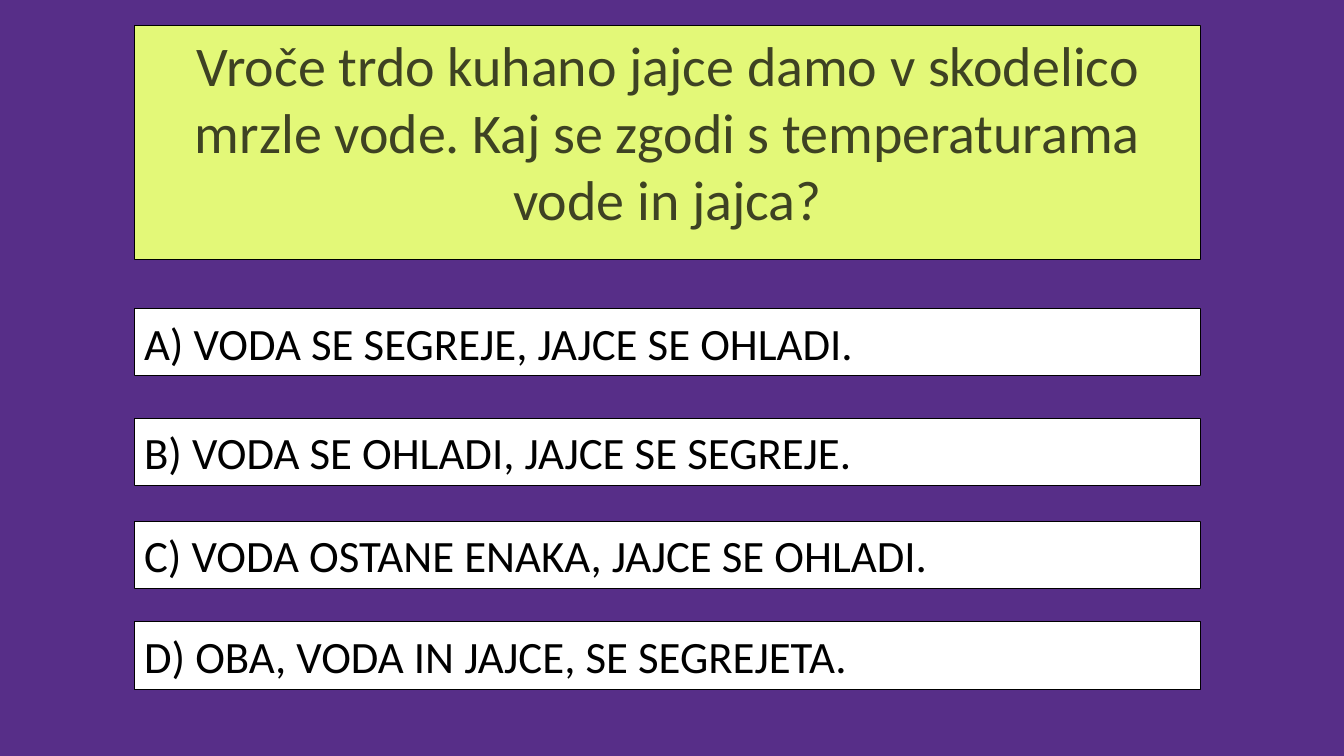
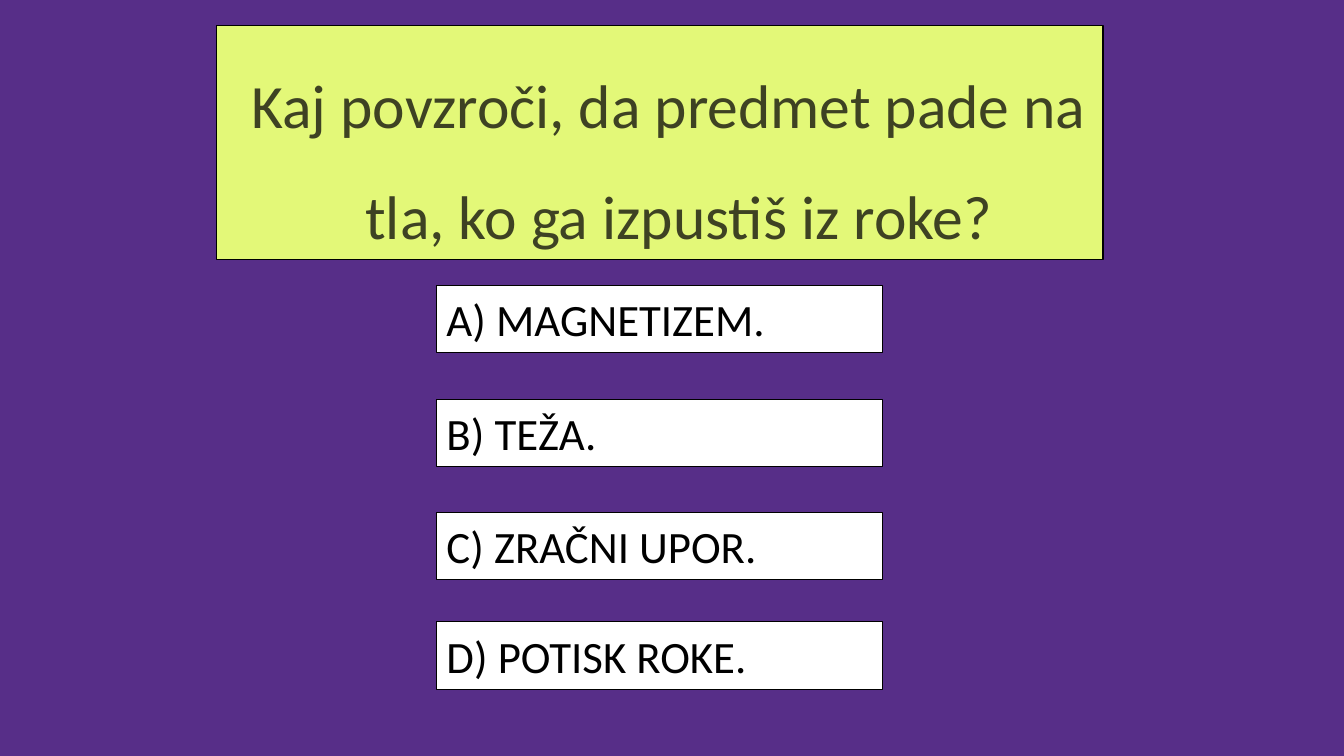
"""Builds two quiz slides, each with a question panel and four answer buttons."""
import pptx
import pptx.dml.color
import pptx.enum.shapes
import pptx.enum.text
import pptx.util

Inches = pptx.util.Inches
SHAPE = pptx.enum.shapes.MSO_SHAPE
ALIGN = pptx.enum.text.PP_ALIGN
ANCHOR = pptx.enum.text.MSO_ANCHOR

FONT = "Calibri"
PURPLE, LIME, OLIVE = "572E88", "E3F878", "3E4223"
BLACK, WHITE = "000000", "FFFFFF"
PANEL_TOP, PANEL_HEIGHT, BUTTON_HEIGHT = 0.25, 2.33, 0.67

QUIZ = [
    {
        "question": "Vroče trdo kuhano jajce damo v skodelico mrzle vode. "
                    "Kaj se zgodi s temperaturama vode in jajca?",
        "panel": (1.33, 10.58),
        "style": {"size": 40},
        "buttons": (1.33, 10.58),
        "answers": [
            (3.06, "A) VODA SE SEGREJE, JAJCE SE OHLADI."),
            (4.15, "B) VODA SE OHLADI, JAJCE SE SEGREJE."),
            (5.17, "C) VODA OSTANE ENAKA, JAJCE SE OHLADI."),
            (6.17, "D) OBA, VODA IN JAJCE, SE SEGREJETA."),
        ],
    },
    {
        "question": "Kaj povzroči, da predmet pade na tla, ko ga izpustiš iz roke?",
        "panel": (2.15, 8.79),
        "style": {"size": 44, "spacing": 1.5, "margin": 0.38, "indent": -0.2},
        "buttons": (4.33, 4.42),
        "answers": [
            (2.83, "A) MAGNETIZEM."),
            (3.96, "B) TEŽA."),
            (5.08, "C) ZRAČNI UPOR."),
            (6.17, "D) POTISK ROKE."),
        ],
    },
]


def paint(color_format, color):
    """Set a colour from a hex string."""
    color_format.rgb = pptx.dml.color.RGBColor.from_string(color)


def add_box(s, kind, box, fill, text, size, color):
    """Add an outlined, filled shape with one paragraph of text."""
    sp = s.shapes.add_shape(kind, *(Inches(v) for v in box))
    sp.shadow.inherit = False
    sp.fill.solid()
    paint(sp.fill.fore_color, fill)
    paint(sp.line.color, BLACK)
    sp.line.width = pptx.util.Pt(0.75)
    sp.text_frame.text = text
    r = sp.text_frame.paragraphs[0].runs[0]
    r.font.name = FONT
    r.font.size = pptx.util.Pt(size)
    paint(r.font.color, color)
    return sp.text_frame


def add_question(s, box, text, size, spacing=1.0, margin=0, indent=0):
    """Place the centred question panel."""
    tf = add_box(s, SHAPE.RECTANGLE, box, LIME, text, size, OLIVE)
    tf.word_wrap = True
    tf.vertical_anchor = ANCHOR.TOP
    p = tf.paragraphs[0]
    p.alignment = ALIGN.CENTER
    p.line_spacing = spacing
    pPr = p._p.get_or_add_pPr()
    pPr.set("marL", str(Inches(margin)))
    pPr.set("indent", str(Inches(indent)))


def add_answer(s, box, text):
    """Place one answer button."""
    tf = add_box(s, SHAPE.ACTION_BUTTON_CUSTOM, box, WHITE, text, 32, BLACK)
    tf.word_wrap = False
    tf.vertical_anchor = ANCHOR.MIDDLE
    tf.paragraphs[0].alignment = ALIGN.LEFT


def add_quiz_slide(prs, quiz):
    """Add one slide with its question and answers."""
    s = prs.slides.add_slide(prs.slide_layouts[6])
    s.background.fill.solid()
    paint(s.background.fill.fore_color, PURPLE)
    left, width = quiz["panel"]
    add_question(s, (left, PANEL_TOP, width, PANEL_HEIGHT),
                 quiz["question"], **quiz["style"])
    left, width = quiz["buttons"]
    for top, answer in quiz["answers"]:
        add_answer(s, (left, top, width, BUTTON_HEIGHT), answer)


def main():
    """Build and save the presentation."""
    prs = pptx.Presentation()
    prs.slide_width, prs.slide_height = Inches(13.33), Inches(7.5)
    for quiz in QUIZ:
        add_quiz_slide(prs, quiz)
    prs.save("out.pptx")


if __name__ == "__main__":
    main()
